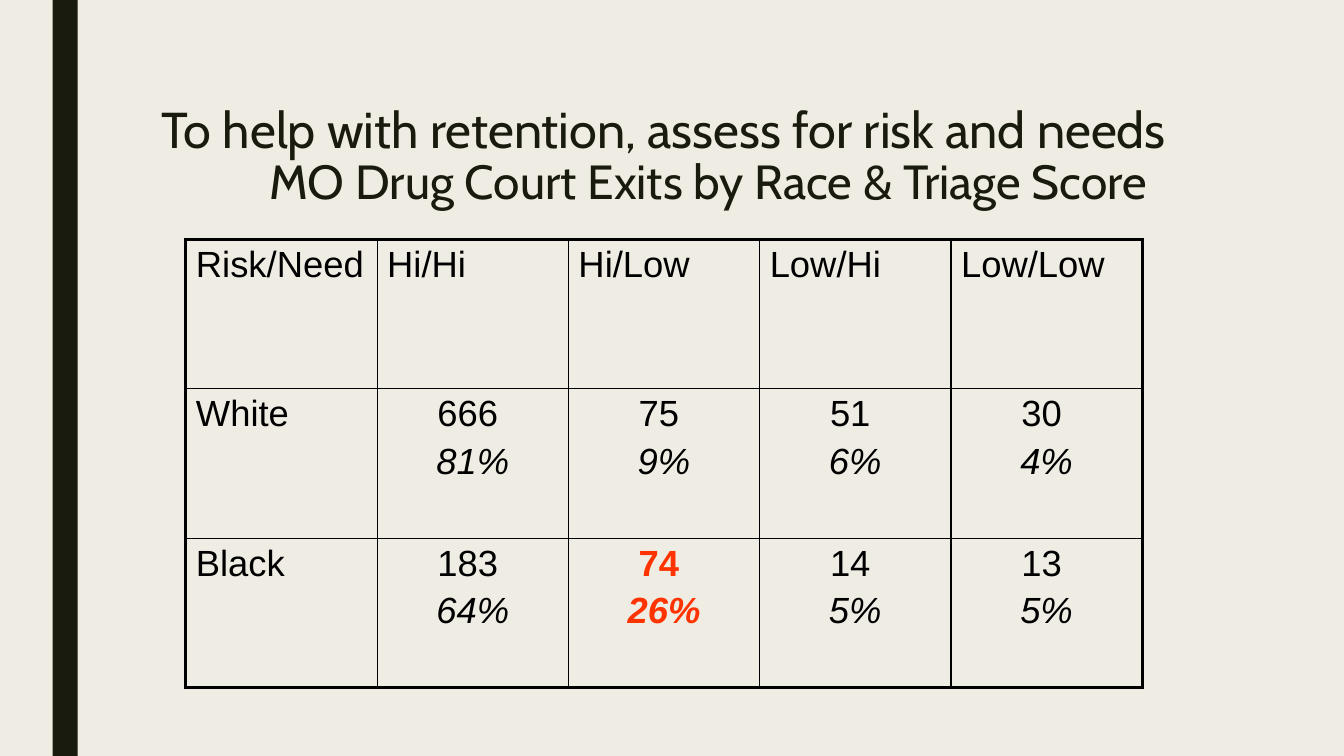
from lxml import etree
from pptx import Presentation, util as u
from pptx.dml.color import RGBColor
from pptx.enum import shapes, text
from pptx.oxml import ns

PX = 9525
DARK = RGBColor(0x19, 0x1B, 0x0E)
CREAM = RGBColor(0xEF, 0xED, 0xE3)
BLACK = RGBColor(0, 0, 0)
RED = RGBColor(0xFF, 0x33, 0x00)

HEADS = ["Risk/Need", "Hi/Hi", "Hi/Low", "Low/Hi", "Low/Low"]
EXITS = [
    ("White", [("666 ", "81%"), ("75 ", "9%"), ("51 ", "6%"), ("30 ", "4%")]),
    ("Black", [("183 ", "64%"), ("74 ", "26%"), ("14 ", "5%"), ("13 ", "5%")]),
]
ACCENT = (2, 2)


def scale(box):
    return [n * PX for n in box]


def add_rail(slide, box):
    rail = slide.shapes.add_shape(shapes.MSO_SHAPE.RECTANGLE, *scale(box))
    rail.shadow.inherit = False
    rail.fill.solid()
    rail.fill.fore_color.rgb = DARK
    rail.line.fill.background()


def add_title(slide, box):
    frame = slide.shapes.add_textbox(*scale(box)).text_frame
    frame.word_wrap = True
    frame.vertical_anchor = text.MSO_ANCHOR.MIDDLE
    lines = [
        ("To help with retention, assess for risk and needs", 36, 0),
        ("MO Drug Court Exits by Race & Triage Score", 34.2, 103),
    ]
    for i, (line, size, indent) in enumerate(lines):
        para = frame.add_paragraph() if i else frame.paragraphs[0]
        para.text = line
        para.line_spacing = 0.89
        para._p.get_or_add_pPr().set("marL", str(indent * PX))
        para.font.name = "Cabin"
        para.font.size = u.Pt(size)
        para.font.color.rgb = DARK


def set_edges(cell, widths):
    props = cell._tc.get_or_add_tcPr()
    for i, (side, width) in enumerate(zip("LRTB", widths)):
        line = etree.Element(ns.qn(f"a:ln{side}"), w=str(u.Pt(width)))
        fill = etree.SubElement(line, ns.qn("a:solidFill"))
        etree.SubElement(fill, ns.qn("a:srgbClr"), val=str(BLACK))
        props.insert(i, line)


def fill_cell(cell, lines, accent):
    cell.fill.background()
    frame = cell.text_frame
    for i, line in enumerate(lines):
        para = frame.add_paragraph() if i else frame.paragraphs[0]
        para.text = line
        if len(lines) > 1:
            para.alignment = text.PP_ALIGN.CENTER
        if i:
            para.space_before = u.Pt(5)
        para.font.name = "Arial"
        para.font.size = u.Pt(26)
        para.font.bold = accent
        para.font.italic = i > 0
        para.font.color.rgb = RED if accent else BLACK


def add_grid(slide, box):
    rows = [[(head,) for head in HEADS]]
    rows += [[(race,), *pairs] for race, pairs in EXITS]
    high, wide = len(rows), len(HEADS)
    table = slide.shapes.add_table(high, wide, *scale(box)).table
    table.first_row = table.horz_banding = False
    for r, row in enumerate(rows):
        for c, lines in enumerate(row):
            cell = table.cell(r, c)
            fill_cell(cell, lines, (r, c) == ACCENT)
            outer = (c == 0, c == wide - 1, r == 0, r == high - 1)
            set_edges(cell, [2.25 if edge else 1 for edge in outer])


def main():
    deck = Presentation()
    deck.slide_width, deck.slide_height = scale((1280, 720))
    slide = deck.slides.add_slide(deck.slide_layouts[6])
    slide.background.fill.solid()
    slide.background.fill.fore_color.rgb = CREAM
    add_rail(slide, (50, 0, 24, 720))
    add_title(slide, (144, 72, 1008, 156))
    add_grid(slide, (177, 228, 911, 427))
    deck.save("out.pptx")


if __name__ == "__main__":
    main()
